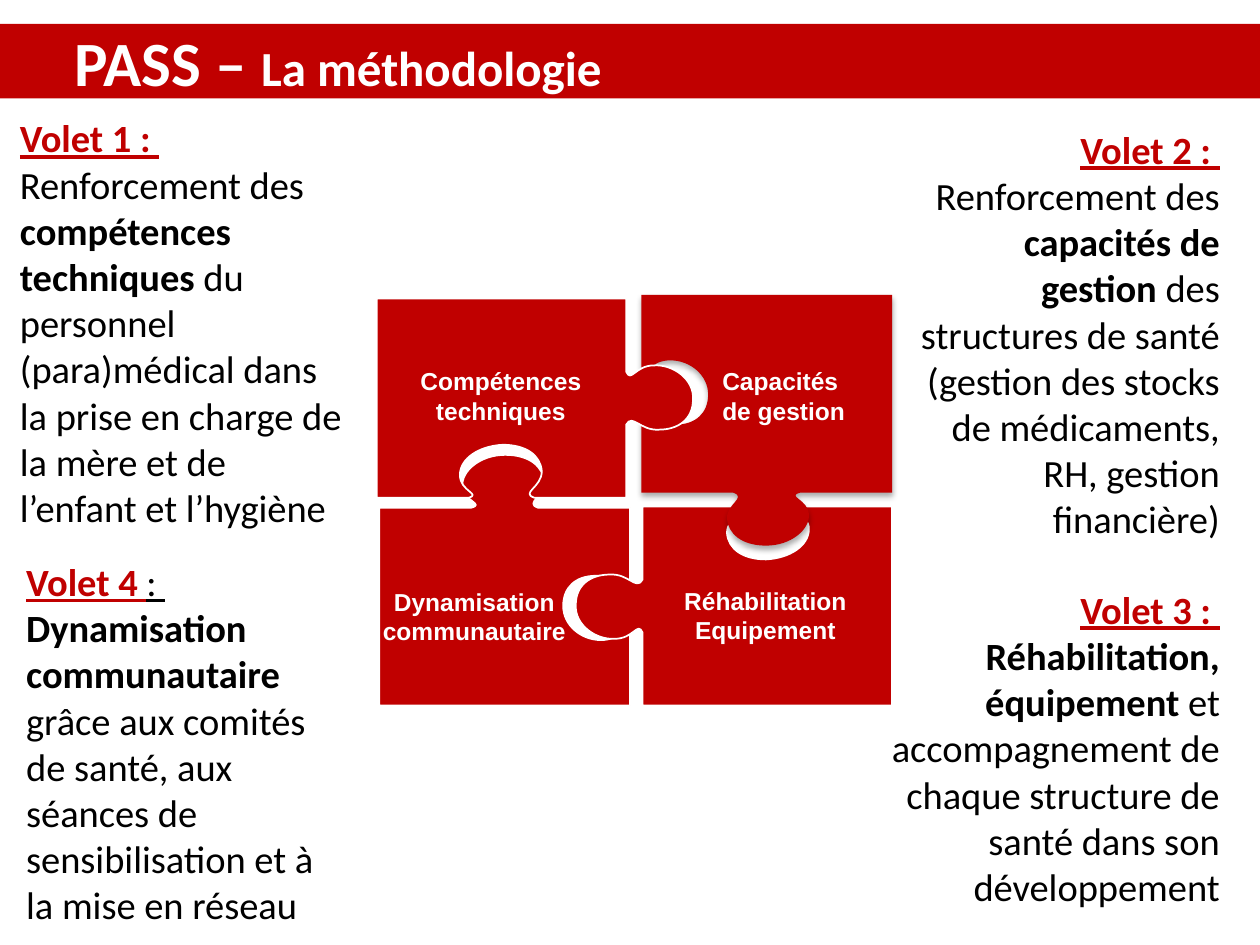
from lxml import etree
from pptx import Presentation
from pptx.dml.color import RGBColor
from pptx.enum.text import MSO_ANCHOR as Anchor, MSO_AUTO_SIZE as Fit, PP_ALIGN as Align
from pptx.oxml.ns import qn
from pptx.util import Inches, Pt

RED, WHITE, BLACK = "C00000", "FFFFFF", "000000"
HEAD = dict(size=Pt(22), name="Calibri", bold=True, underline=True, color=RED)
COLON = dict(HEAD, bold=False, color=BLACK)
PLAIN = dict(size=Pt(22), name="Calibri", bold=False, color=BLACK)
STRONG = dict(PLAIN, bold=True)
LABEL = dict(size=Pt(14), name="Arial", bold=True, color=WHITE)
TITLE = dict(size=Pt(36), name="Calibri", bold=True, color=WHITE)
SUBTITLE = dict(TITLE, size=Pt(28))

TAB_ABOVE = [
    [(0, -1.57)], [(0.73, -1.57)],
    [(0.84, -1.6), (0.67, -1.62), (0.66, -1.74)],
    [(0.65, -1.86), (0.8, -1.99), (1, -1.99)],
    [(1.2, -1.99), (1.3, -1.89), (1.31, -1.78)],
    [(1.32, -1.66), (1.15, -1.61), (1.26, -1.57)],
    [(1.99, -1.57)], [(1.99, -0.99)],
    [(1.94, -0.9), (1.89, -1.04), (1.72, -1.03)],
    [(1.56, -1.03), (1.46, -0.94), (1.46, -0.79)],
    [(1.46, -0.64), (1.6, -0.52), (1.76, -0.52)],
    [(1.93, -0.52), (1.95, -0.66), (1.99, -0.58)],
    [(1.99, 0)], [(0, 0)]]
TAB_RIGHT = [
    [(1.98, 0)], [(1.98, 0.58)],
    [(2.02, 0.67), (2.05, 0.53), (2.2, 0.53)],
    [(2.35, 0.52), (2.52, 0.64), (2.51, 0.8)],
    [(2.51, 0.96), (2.39, 1.04), (2.24, 1.04)],
    [(2.09, 1.05), (2.03, 0.91), (1.98, 1)],
    [(1.98, 1.58)], [(1.25, 1.58)],
    [(1.14, 1.54), (1.31, 1.5), (1.31, 1.37)],
    [(1.3, 1.24), (1.18, 1.16), (1, 1.16)],
    [(0.81, 1.17), (0.66, 1.27), (0.66, 1.4)],
    [(0.66, 1.53), (0.83, 1.55), (0.73, 1.58)],
    [(0, 1.58)], [(0, 0)]]

PIECES = [
    (TAB_ABOVE, (3.01, 5.6), 1, False),
    (TAB_RIGHT, (7.08, 5.6), -1, False),
    (TAB_ABOVE, (7.08, 2.34), -1, True),
    (TAB_RIGHT, (2.99, 2.37), 1, False)]

LABELS = [
    ((3.19, 2.86, 1.57, 0.57), ["Compétences techniques"], None),
    ((5.63, 2.86, 1.18, 0.57), ["Capacités ", "de gestion"], RED),
    ((2.9, 4.61, 1.73, 0.57), ["Dynamisation communautaire"], None),
    ((5.29, 4.6, 1.57, 0.57), ["Réhabilitation", "Equipement"], None)]

VOLETS = [
    ((0.06, 0.86, 2.76, 3.43), Align.LEFT, [
        [("Volet 1 : ", HEAD)],
        [("Renforcement des ", PLAIN), ("compétences techniques ", STRONG),
         ("du personnel (para)médical dans la prise en charge de la mère "
          "et de l’enfant et l’hygiène", PLAIN)]]),
    ((7.18, 0.95, 2.6, 3.43), Align.RIGHT, [
        [("Volet 2 : ", HEAD)],
        [("Renforcement des ", PLAIN), ("capacités de gestion", STRONG),
         (" des structures de santé (gestion des stocks de médicaments, "
          "RH, gestion financière)", PLAIN)]]),
    ((0.11, 4.38, 2.6, 3.06), Align.LEFT, [
        [("Volet 4 ", HEAD), (": ", COLON)],
        [("Dynamisation communautaire", STRONG)],
        [("grâce aux comités de santé, aux séances de sensibilisation "
          "et à la mise en réseau", PLAIN)]]),
    ((6.95, 4.6, 2.83, 2.69), Align.RIGHT, [
        [("Volet 3 : ", HEAD)],
        [("Réhabilitation, équipement ", STRONG),
         ("et accompagnement de chaque structure de santé dans son "
          "développement", PLAIN)]])]


def rgb(value):
    return RGBColor.from_string(value)


def paint(sp, color):
    sp.fill.solid()
    sp.fill.fore_color.rgb = rgb(color)


def write(tf, paragraphs, align):
    tf.word_wrap = True
    for i, runs in enumerate(paragraphs):
        p = tf.paragraphs[0] if i == 0 else tf.add_paragraph()
        p.alignment = align
        for text, style in runs:
            r = p.add_run()
            r.text = text
            for key, value in style.items():
                if key == "color":
                    r.font.color.rgb = rgb(value)
                else:
                    setattr(r.font, key, value)


def add_title(slide, box):
    sp = slide.shapes.title
    sp.left, sp.top, sp.width, sp.height = map(Inches, box)
    paint(sp, RED)
    tf = sp.text_frame
    tf.auto_size, tf.vertical_anchor = Fit.NONE, Anchor.MIDDLE
    tf.margin_left = Inches(0.59)
    write(tf, [[("PASS – ", TITLE), ("La méthodologie", SUBTITLE)]], Align.LEFT)


def add_text(slide, box, paragraphs, align, fill=None):
    sp = slide.shapes.add_textbox(*map(Inches, box))
    if fill:
        paint(sp, fill)
    write(sp.text_frame, paragraphs, align)
    sp.text_frame.auto_size = Fit.SHAPE_TO_FIT_TEXT


def bend(sp, outline):
    lines = iter(list(sp._element.iter(qn("a:lnTo"))))
    for part in outline:
        segments = [next(lines) for _ in part]
        if len(segments) == 3:
            curve = etree.Element(qn("a:cubicBezTo"))
            segments[0].addprevious(curve)
            for segment in segments:
                curve.append(segment[0])
                segment.getparent().remove(segment)


def add_shadow(sp):
    effects = sp._element.spPr.find(qn("a:effectLst"))
    shadow = etree.SubElement(effects, qn("a:outerShdw"), blurRad=str(Pt(3.5)),
                              dist=str(Pt(2.2)), dir="5400000", rotWithShape="0")
    color = etree.SubElement(shadow, qn("a:srgbClr"), val=BLACK)
    etree.SubElement(color, qn("a:alpha"), val="32000")


def add_piece(group, outline, corner, turn, raised):
    points = [tuple(Inches(c + turn * d) for c, d in zip(corner, point))
              for part in outline for point in part]
    builder = group.shapes.build_freeform(*map(Inches, corner))
    builder.add_line_segments(points, close=True)
    sp = builder.convert_to_shape()
    bend(sp, outline)
    sp.shadow.inherit = False
    paint(sp, RED)
    if raised:
        sp.line.fill.background()
        add_shadow(sp)
    else:
        sp.line.color.rgb = rgb(WHITE)
        sp.line.width = Pt(1)


def main():
    prs = Presentation()
    prs.slide_width, prs.slide_height = Inches(10), Inches(7.5)
    slide = prs.slides.add_slide(prs.slide_layouts[5])
    add_title(slide, (0, 0.19, 10, 0.59))
    group = slide.shapes.add_group_shape()
    for piece in PIECES:
        add_piece(group, *piece)
    for box, lines, fill in LABELS:
        add_text(slide, box, [[(line, LABEL)] for line in lines], Align.CENTER, fill)
    for box, align, paragraphs in VOLETS:
        add_text(slide, box, paragraphs, align)
    prs.save("out.pptx")


if __name__ == "__main__":
    main()
